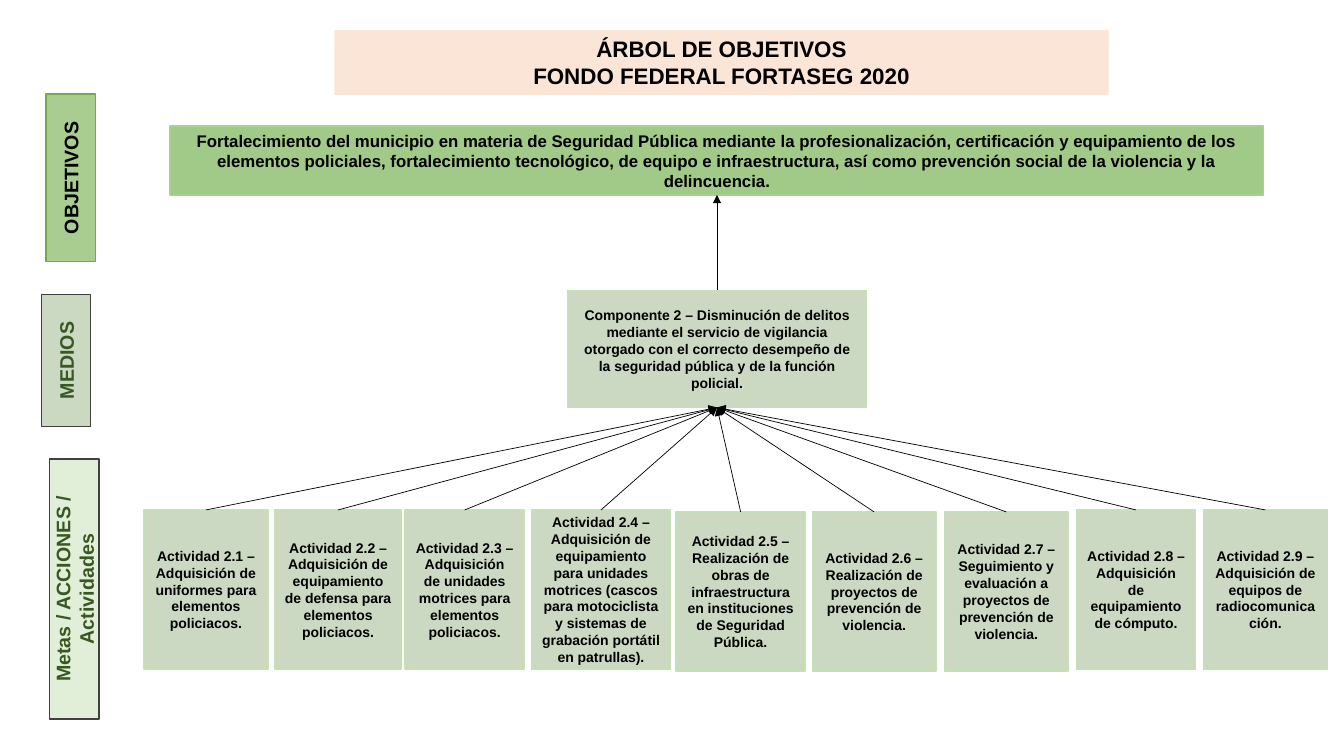
from lxml import etree
from pptx import Presentation
from pptx import util as u
from pptx.dml.color import RGBColor
from pptx.enum import shapes, text
from pptx.oxml.ns import qn

BLACK = RGBColor(0x00, 0x00, 0x00)
PEACH = RGBColor(0xFB, 0xE5, 0xD6)
GREEN = RGBColor(0x70, 0xAD, 0x47)
SOFT_GREEN = RGBColor(0xA9, 0xD1, 0x8E)
PALE_GREEN = RGBColor(0xC5, 0xE0, 0xB4)
MOSS = RGBColor(0x54, 0x82, 0x35)
DARK_GREEN = RGBColor(0x38, 0x57, 0x23)
GRAY = RGBColor(0x40, 0x40, 0x40)


def add_box(place, lines, size, fill, opacity=100, border=None, color=BLACK,
            kind=shapes.MSO_SHAPE.FLOWCHART_PROCESS, anchor=text.MSO_ANCHOR.MIDDLE):
    box = page.shapes.add_shape(kind, *[u.Cm(length) for length in place])
    box.shadow.inherit = False
    box.fill.solid()
    box.fill.fore_color.rgb = fill
    if opacity < 100:
        tint = box._element.spPr.find(qn("a:solidFill")).find(qn("a:srgbClr"))
        etree.SubElement(tint, qn("a:alpha"), val=str(opacity * 1000))
    if border is None:
        box.line.fill.background()
    else:
        box.line.color.rgb = border
        box.line.width = u.Pt(1)
    frame = box.text_frame
    frame.word_wrap = True
    frame.vertical_anchor = anchor
    for number, line in enumerate(lines):
        para = frame.add_paragraph() if number else frame.paragraphs[0]
        para.alignment = text.PP_ALIGN.CENTER
        span = para.add_run()
        span.text = line
        for name, value in {"name": "Arial", "size": u.Pt(size), "bold": True}.items():
            setattr(span.font, name, value)
        span.font.color.rgb = color
    return box


def add_arrow(start, end):
    arrow = page.shapes.add_connector(
        shapes.MSO_CONNECTOR.STRAIGHT, *[u.Cm(length) for length in start + end])
    arrow.line.color.rgb = BLACK
    arrow.line.width = u.Pt(0.5)
    etree.SubElement(arrow.line._get_or_add_ln(), qn("a:tailEnd"), type="triangle")
    etree.SubElement(arrow._element.spPr, qn("a:effectLst"))


deck = Presentation()
deck.slide_width = u.Cm(33.87)
deck.slide_height = u.Cm(19.05)
page = deck.slides.add_slide(deck.slide_layouts[6])

add_box((8.43, 0.76, 19.51, 1.63), ["ÁRBOL DE OBJETIVOS", "FONDO FEDERAL FORTASEG 2020"],
        16, PEACH, kind=shapes.MSO_SHAPE.RECTANGLE, anchor=text.MSO_ANCHOR.TOP)
add_box((4.29, 3.18, 27.56, 1.73), [
    "Fortalecimiento del municipio en materia de Seguridad Pública mediante la "
    "profesionalización, certificación y equipamiento de los elementos policiales, "
    "fortalecimiento tecnológico, de equipo e infraestructura, así como prevención "
    "social de la violencia y la delincuencia."], 12, GREEN, 65, SOFT_GREEN)

levels = [
    ("OBJETIVOS", -0.33, 3.86, 4.22, GREEN, 60, GREEN, BLACK),
    ("MEDIOS", 0, 8.46, 3.33, MOSS, 30, GRAY, DARK_GREEN),
    ("Metas / ACCIONES / Actividades", -1.4, 14.22, 6.55, PALE_GREEN, 50, GRAY, DARK_GREEN),
]
for label, left, top, width, fill, opacity, border, color in levels:
    level = add_box((left, top, width, 1.24), [label], 14, fill, opacity, border, color)
    level.rotation = 270

center, component_top, component_height = 18.07, 7.32, 2.95
component_bottom = component_top + component_height
add_arrow((center, component_top), (center, 4.91))
add_box((14.3, component_top, 7.54, component_height), [
    "Componente 2 – Disminución de delitos mediante el servicio de vigilancia otorgado "
    "con el correcto desempeño de la seguridad pública y de la función policial."],
    10, MOSS, 30, PALE_GREEN)

activities = [
    (3.63, 12.85, 3.12, "Adquisición de uniformes para elementos policiacos."),
    (6.93, 12.85, 3.18, "Adquisición de equipamiento de defensa para elementos policiacos."),
    (10.21, 12.85, 3.0, "Adquisición de unidades motrices para elementos policiacos."),
    (13.39, 12.85, 3.51, "Adquisición de equipamiento para unidades motrices (cascos para "
                         "motociclista y sistemas de grabación portátil en patrullas)."),
    (17.04, 12.9, 3.25, "Realización de obras de infraestructura en instituciones de "
                        "Seguridad Pública."),
    (20.47, 12.9, 3.12, "Realización de proyectos de prevención de violencia."),
    (23.8, 12.9, 3.12, "Seguimiento y evaluación a proyectos de prevención de violencia."),
    (27.13, 12.85, 3.0, "Adquisición de equipamiento de cómputo."),
    (30.33, 12.85, 3.12, "Adquisición de equipos de radiocomunicación."),
]
for number, (left, top, width, task) in enumerate(activities, 1):
    add_box((left, top, width, 4.01), [f"Actividad 2.{number} – {task}"],
            10, MOSS, 30, PALE_GREEN)
for left, top, width, task in activities:
    add_arrow((left + width / 2, top), (center, component_bottom))

deck.save("out.pptx")
